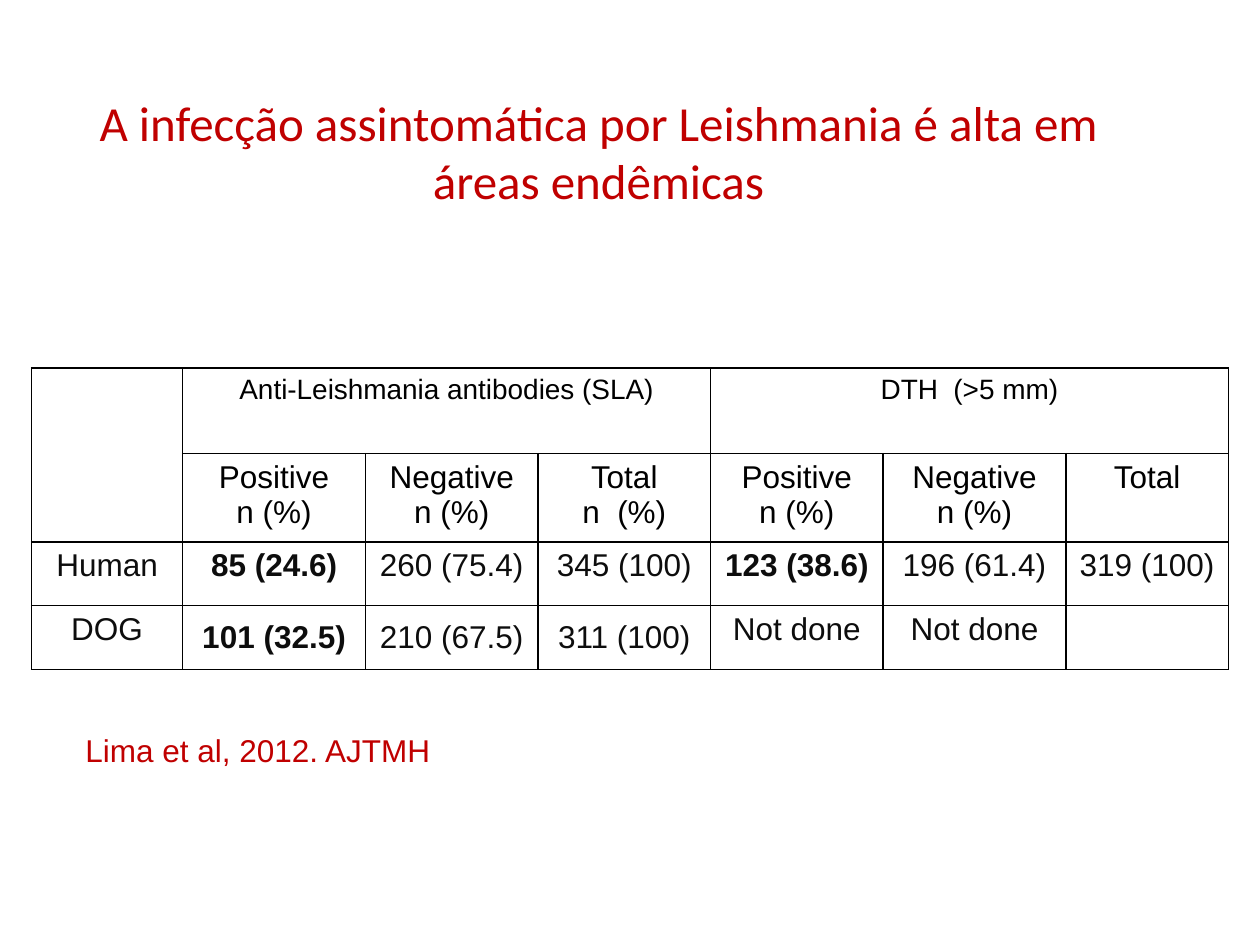
from lxml.etree import SubElement
from pptx import Presentation
from pptx.dml.color import RGBColor
from pptx.enum.text import MSO_ANCHOR, MSO_AUTO_SIZE, PP_ALIGN
from pptx.oxml.ns import qn
from pptx.util import Pt

# Content
TITLE = "A infecção assintomática por Leishmania é alta em áreas endêmicas"
SOURCE = "Lima et al, 2012. AJTMH"
ROWS = [
    ["", "Anti-Leishmania antibodies (SLA)", "", "", "DTH  (>5 mm)", "", ""],
    ["", "Positive\nn (%)", "Negative\nn (%)", "Total\nn  (%)",
     "Positive\nn (%)", "Negative\nn (%)", "Total"],
    ["Human", "85 (24.6)", "260 (75.4)", "345 (100)",
     "123 (38.6)", "196 (61.4)", "319 (100)"],
    ["DOG", "101 (32.5)", "210 (67.5)", "311 (100)", "Not done", "Not done", ""],
]
MERGES = [((0, 0), (1, 0)), ((0, 1), (0, 3)), ((0, 4), (0, 6))]
BOLD_CELLS = {(2, 1), (2, 4), (3, 1)}
MIDDLE_CELLS = {(3, 1), (3, 2), (3, 3)}

# Layout, in points
COLUMN_WIDTHS = [86.4, 104.4, 98.64, 98.64, 98.64, 104.4, 92.88]
ROW_HEIGHTS = [49, 50.4, 36.5, 36.5]
TABLE_LEFT, TABLE_TOP = 18, 210.25

# Formats
TITLE_FORMAT = {"name": "Calibri", "size": Pt(28), "bold": False}
BODY_FORMAT = {"name": "Arial", "size": Pt(18), "bold": False}
RED, BLACK, INK = "C00000", "000000", "0D0D0D"


def format_font(font, values, color):
    for name, value in values.items():
        setattr(font, name, value)
    font.color.rgb = RGBColor.from_string(color)


def add_borders(cell, color, width):
    properties = cell._tc.get_or_add_tcPr()
    for position, side in enumerate(("lnL", "lnR", "lnT", "lnB")):
        line = SubElement(properties, qn(f"a:{side}"), w=str(Pt(width)))
        fill = SubElement(line, qn("a:solidFill"))
        SubElement(fill, qn("a:srgbClr"), val=color)
        properties.insert(position, line)


deck = Presentation()
deck.slide_width, deck.slide_height = Pt(720), Pt(540)
page = deck.slides.add_slide(deck.slide_layouts[5])

# Title
title = page.shapes.title
title.left, title.top, title.width, title.height = Pt(18), Pt(49), Pt(648), Pt(90)
title.text_frame.text = TITLE
title.text_frame.vertical_anchor = MSO_ANCHOR.TOP
title.text_frame.auto_size = MSO_AUTO_SIZE.NONE
para = title.text_frame.paragraphs[0]
para.alignment = PP_ALIGN.CENTER
format_font(para.runs[0].font, TITLE_FORMAT, RED)

# Table
table = page.shapes.add_table(
    len(ROWS), len(COLUMN_WIDTHS), Pt(TABLE_LEFT), Pt(TABLE_TOP),
    Pt(sum(COLUMN_WIDTHS)), Pt(sum(ROW_HEIGHTS))).table
table.first_row = table.horz_banding = False
for column, width in zip(table.columns, COLUMN_WIDTHS):
    column.width = Pt(width)
for row, height in zip(table.rows, ROW_HEIGHTS):
    row.height = Pt(height)
for start, end in MERGES:
    table.cell(*start).merge(table.cell(*end))

for row_number, texts in enumerate(ROWS):
    for column_number, text in enumerate(texts):
        place = row_number, column_number
        cell = table.cell(*place)
        cell.fill.background()
        add_borders(cell, BLACK, 1)
        if place in MIDDLE_CELLS:
            cell.vertical_anchor = MSO_ANCHOR.MIDDLE
        if not text:
            continue
        cell.text_frame.text = text
        values = {**BODY_FORMAT, "size": Pt(18 if row_number else 16),
                  "bold": place in BOLD_CELLS}
        for para in cell.text_frame.paragraphs:
            para.alignment = PP_ALIGN.CENTER
            format_font(para.runs[0].font, values, BLACK if row_number < 2 else INK)

# Source line
box = page.shapes.add_textbox(Pt(41.76), Pt(414), Pt(213.84), Pt(29))
box.text_frame.word_wrap = False
box.text_frame.auto_size = MSO_AUTO_SIZE.SHAPE_TO_FIT_TEXT
box.text_frame.text = SOURCE
format_font(box.text_frame.paragraphs[0].runs[0].font, BODY_FORMAT, RED)

deck.save("out.pptx")
